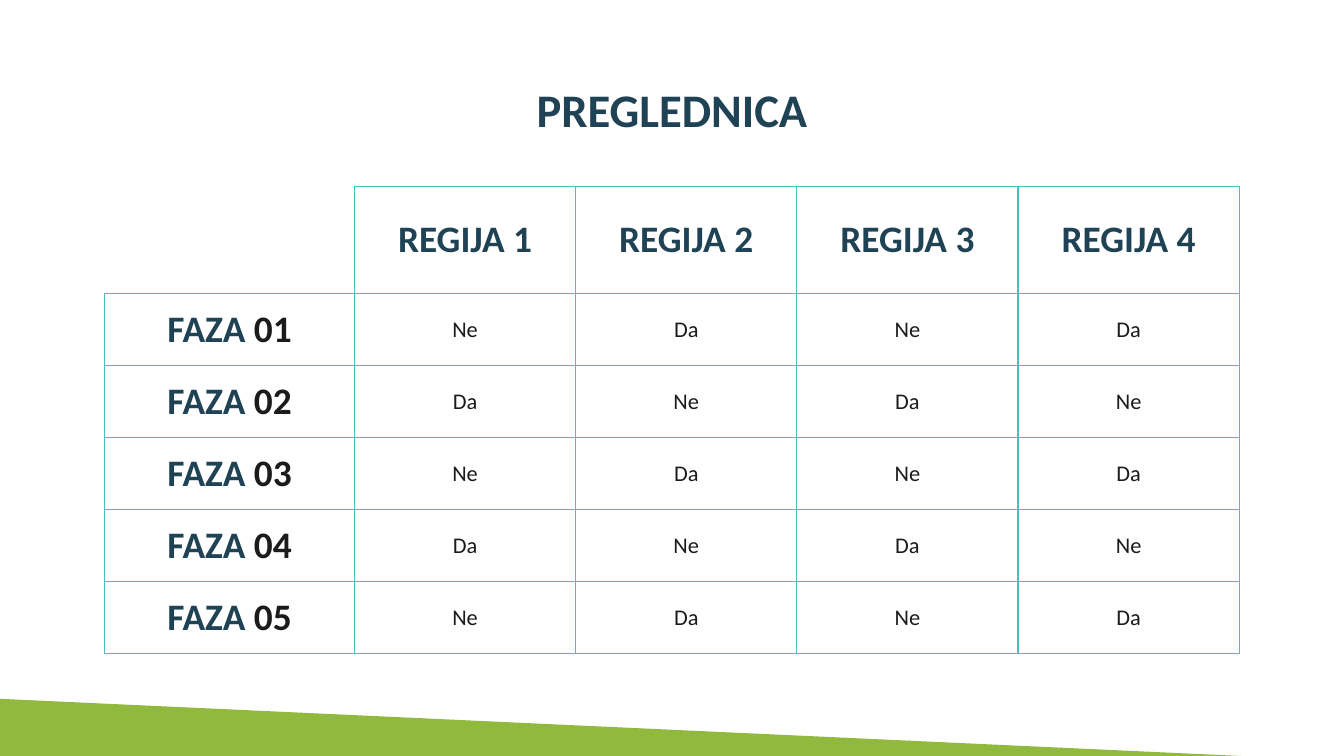
from lxml.etree import SubElement
from pptx import Presentation
from pptx.dml.color import RGBColor
from pptx.enum.shapes import MSO_SHAPE
from pptx.enum.text import MSO_ANCHOR, PP_ALIGN
from pptx.oxml.ns import qn
from pptx.util import Cm, Pt

FONT = "Calibri"
NAVY, BLACK, TEAL, GREEN, WHITE = "1F4255", "1B1B1B", "43C2BB", "91B93E", "FFFFFF"
INSET = Cm(0.25)


def color(value):
    return RGBColor.from_string(value)


def add_run(paragraph, text, size, value, bold=False):
    run = paragraph.add_run()
    run.text = text
    run.font.name = FONT
    run.font.size = Pt(size)
    run.font.bold = bold
    run.font.color.rgb = color(value)


def set_borders(cell, visible):
    """Draw the sides named in visible; hide the others."""
    properties = cell._tc.get_or_add_tcPr()
    for index, side in enumerate("LRTB"):
        line = SubElement(properties, qn(f"a:ln{side}"), w=str(Pt(0.75)))
        if side in visible:
            fill = SubElement(line, qn("a:solidFill"))
            SubElement(fill, qn("a:srgbClr"), val=TEAL)
        else:
            SubElement(line, qn("a:noFill"))
        # Borders come before the cell fill
        properties.insert(index, line)


def fill_cell(cell, runs, borders="LRTB"):
    cell.fill.solid()
    cell.fill.fore_color.rgb = color(WHITE)
    set_borders(cell, borders)
    cell.vertical_anchor = MSO_ANCHOR.MIDDLE
    cell.margin_left = cell.margin_right = INSET
    cell.margin_top = cell.margin_bottom = INSET
    paragraph = cell.text_frame.paragraphs[0]
    paragraph.alignment = PP_ALIGN.CENTER
    for run in runs:
        add_run(paragraph, *run)


def add_footer_band(slide, left, top, width, height):
    band = slide.shapes.add_shape(MSO_SHAPE.ISOSCELES_TRIANGLE, left, top, width, height)
    band.adjustments[0] = 0
    band.shadow.inherit = False
    band.fill.solid()
    band.fill.fore_color.rgb = color(GREEN)
    band.line.fill.background()


def add_title(slide, left, top, width, height):
    frame = slide.shapes.add_textbox(left, top, width, height).text_frame
    frame.word_wrap = True
    frame.vertical_anchor = MSO_ANCHOR.MIDDLE
    frame.margin_left = frame.margin_right = INSET
    frame.margin_top = frame.margin_bottom = INSET
    paragraph = frame.paragraphs[0]
    paragraph.alignment = PP_ALIGN.CENTER
    add_run(paragraph, "PREGLEDNICA", 25, NAVY, True)


def add_phase_table(slide, left, top, width, height, phases=5, regions=4):
    table = slide.shapes.add_table(phases + 1, regions + 1, left, top, width, height).table

    # Wider label column and taller heading row; the rest is shared equally
    label_width, heading_height = Cm(4.72), Cm(2.02)
    table.columns[0].width = label_width
    table.rows[0].height = heading_height
    for region in range(1, regions + 1):
        table.columns[region].width = (width - label_width) // regions
    for phase in range(1, phases + 1):
        table.rows[phase].height = (height - heading_height) // phases

    # Headings
    fill_cell(table.cell(0, 0), [], borders="RB")
    for region in range(1, regions + 1):
        fill_cell(table.cell(0, region), [(f"REGIJA {region}", 20, NAVY, True)])

    # Phases, with answers alternating like a chessboard
    for phase in range(1, phases + 1):
        fill_cell(table.cell(phase, 0),
                  [("FAZA ", 20, NAVY, True), (f"{phase:02d}", 20, BLACK, True)])
        for region in range(1, regions + 1):
            answer = "Da" if (phase + region) % 2 else "Ne"
            fill_cell(table.cell(phase, region), [(answer, 12, BLACK)])


def main():
    presentation = Presentation()
    presentation.slide_width = Cm(25.4)
    presentation.slide_height = Cm(14.29)
    slide = presentation.slides.add_slide(presentation.slide_layouts[6])
    add_footer_band(slide, Cm(0), Cm(13.21), Cm(25.4), Cm(1.17))
    add_title(slide, Cm(2), Cm(1.25), Cm(21.4), Cm(1.6))
    add_phase_table(slide, Cm(1.98), Cm(3.53), Cm(21.44), Cm(8.82))
    presentation.save("out.pptx")


if __name__ == "__main__":
    main()
